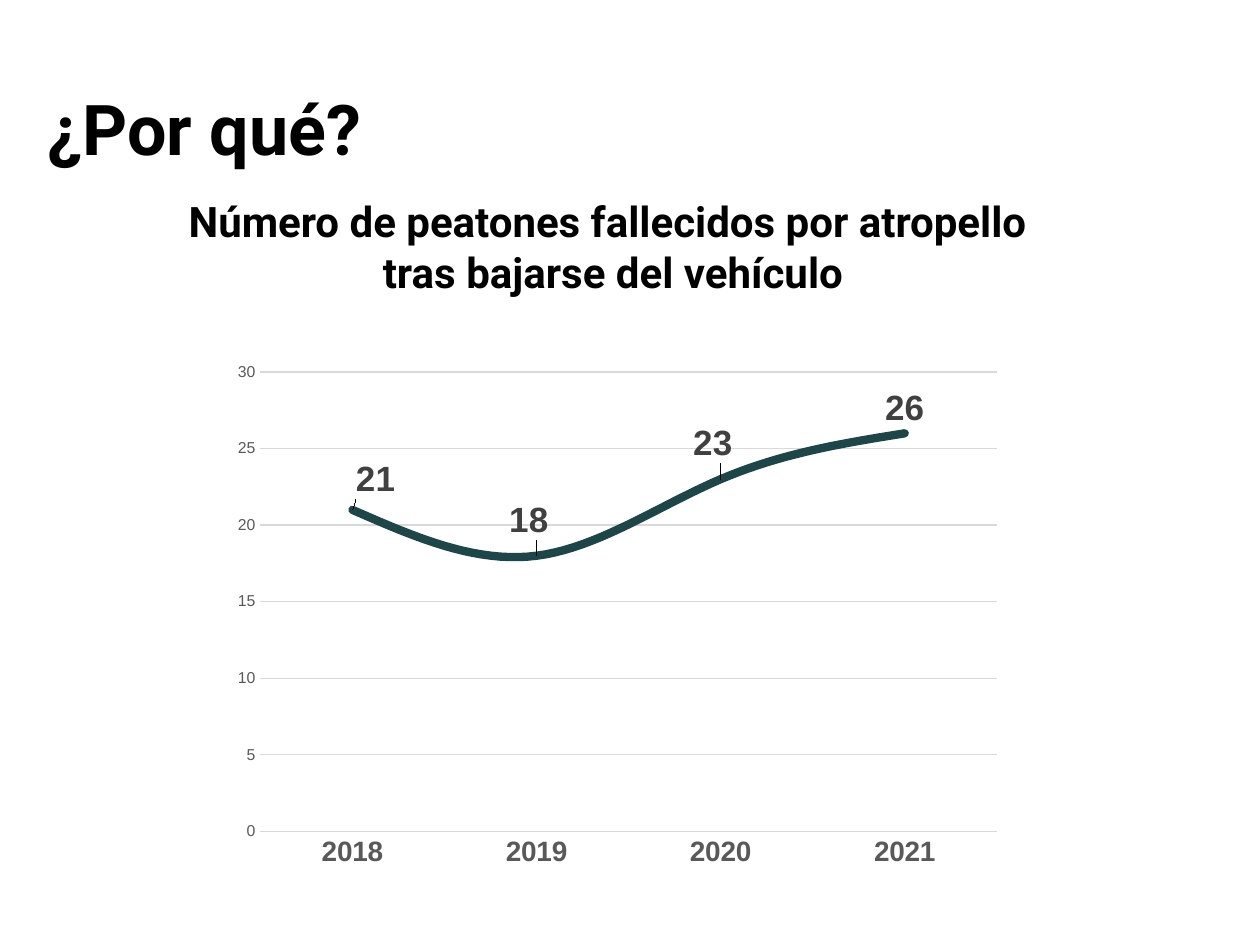
from pptx import Presentation
from pptx.chart.data import CategoryChartData
from pptx.dml.color import RGBColor
from pptx.enum.chart import XL_CHART_TYPE as ChartType, XL_LABEL_POSITION as LabelPosition
from pptx.enum.chart import XL_TICK_MARK as TickMark
from pptx.enum.text import MSO_ANCHOR as Anchor, PP_ALIGN as Align
from pptx.oxml import parse_xml
from pptx.oxml.ns import nsdecls
from pptx.util import Inches, Pt

COLORS = {"text": "000000", "axis": "595959", "grid": "D9D9D9",
          "line": "1E4649", "label": "404040"}
DEATHS = {"2018": 21, "2019": 18, "2020": 23, "2021": 26}
# Shift of each value label from its place above the point, as shares of the chart
LABEL_SHIFTS = [(0.03, -0.01), (-0.01, -0.02), (-0.01, -0.02), (0, 0)]


def style_font(font, name, size, color, bold=False):
    font.name, font.size, font.bold = name, Pt(size), bold
    font.color.rgb = RGBColor.from_string(COLORS[color])


def style_line(line, color, width):
    line.color.rgb = RGBColor.from_string(COLORS[color])
    line.width = Pt(width)


def manual_layout(**values):
    """Return a c:layout element with the given settings in schema order."""
    parts = "".join(f'<c:{tag} val="{value}"/>' for tag, value in values.items())
    return parse_xml(f'<c:layout {nsdecls("c")}><c:manualLayout>{parts}'
                     '</c:manualLayout></c:layout>')


def add_heading(page, area, text, size, align):
    box = page.shapes.add_textbox(*area)
    frame = box.text_frame
    frame.word_wrap = True
    frame.vertical_anchor = Anchor.MIDDLE
    para = frame.paragraphs[0]
    para.text = text
    para.alignment = align
    style_font(para.font, "Roboto", size, "text", True)


def style_axes(chart):
    years, counts = chart.category_axis, chart.value_axis
    for axis in (years, counts):
        axis.major_tick_mark = axis.minor_tick_mark = TickMark.NONE
    style_font(years.tick_labels.font, "Arial", 16, "axis", True)
    style_line(years.format.line, "grid", 0.75)
    style_font(counts.tick_labels.font, "Arial", 9, "axis")
    counts.format.line.fill.background()
    counts.minimum_scale, counts.maximum_scale, counts.major_unit = 0, 30, 5
    style_line(counts.major_gridlines.format.line, "grid", 0.75)


def label_points(series):
    for index, (x, y) in enumerate(LABEL_SHIFTS):
        label = series.points[index].data_label
        style_font(label.font, "Arial", 20, "label", True)
        label.position = LabelPosition.ABOVE
        if x or y:
            element = series._element.xpath(f"c:dLbls/c:dLbl[c:idx/@val='{index}']")[0]
            element.insert(1, manual_layout(x=x, y=y))


def add_deaths_chart(page, area):
    data = CategoryChartData()
    data.categories = list(DEATHS)
    data.add_series("Series 1", list(DEATHS.values()))
    chart = page.shapes.add_chart(ChartType.LINE, *area, data).chart
    chart.has_title = chart.has_legend = False
    style_font(chart.font, "Arial", 10, "text")
    style_axes(chart)

    plot_area = chart._chartSpace.chart.plotArea
    for layout in plot_area.xpath("c:layout"):
        plot_area.remove(layout)
    plot_area.insert(0, manual_layout(layoutTarget="inner", xMode="edge", yMode="edge",
                                      x=0.045, y=0.041, w=0.952, h=0.874))

    plot = chart.plots[0]
    plot.vary_by_categories = False
    series = plot.series[0]
    series.smooth = True
    style_line(series.format.line, "line", 4.75)
    series.format.line._get_or_add_ln().set("cap", "rnd")
    label_points(series)


def main():
    deck = Presentation()
    deck.slide_width, deck.slide_height = Inches(10), Inches(7.5)
    page = deck.slides.add_slide(deck.slide_layouts[6])

    def area(left, top, width, height):
        """Turn shares of the slide into a box."""
        return (int(deck.slide_width * left), int(deck.slide_height * top),
                int(deck.slide_width * width), int(deck.slide_height * height))

    add_heading(page, area(0.028, 0.227, 0.917, 0.067),
                "Número de peatones fallecidos por atropello \vtras bajarse del vehículo",
                24, Align.CENTER)
    add_deaths_chart(page, area(0.179, 0.371, 0.614, 0.556))
    add_heading(page, area(0.028, 0.101, 0.917, 0.067), "¿Por qué?", 40, Align.LEFT)
    deck.save("out.pptx")


if __name__ == "__main__":
    main()
